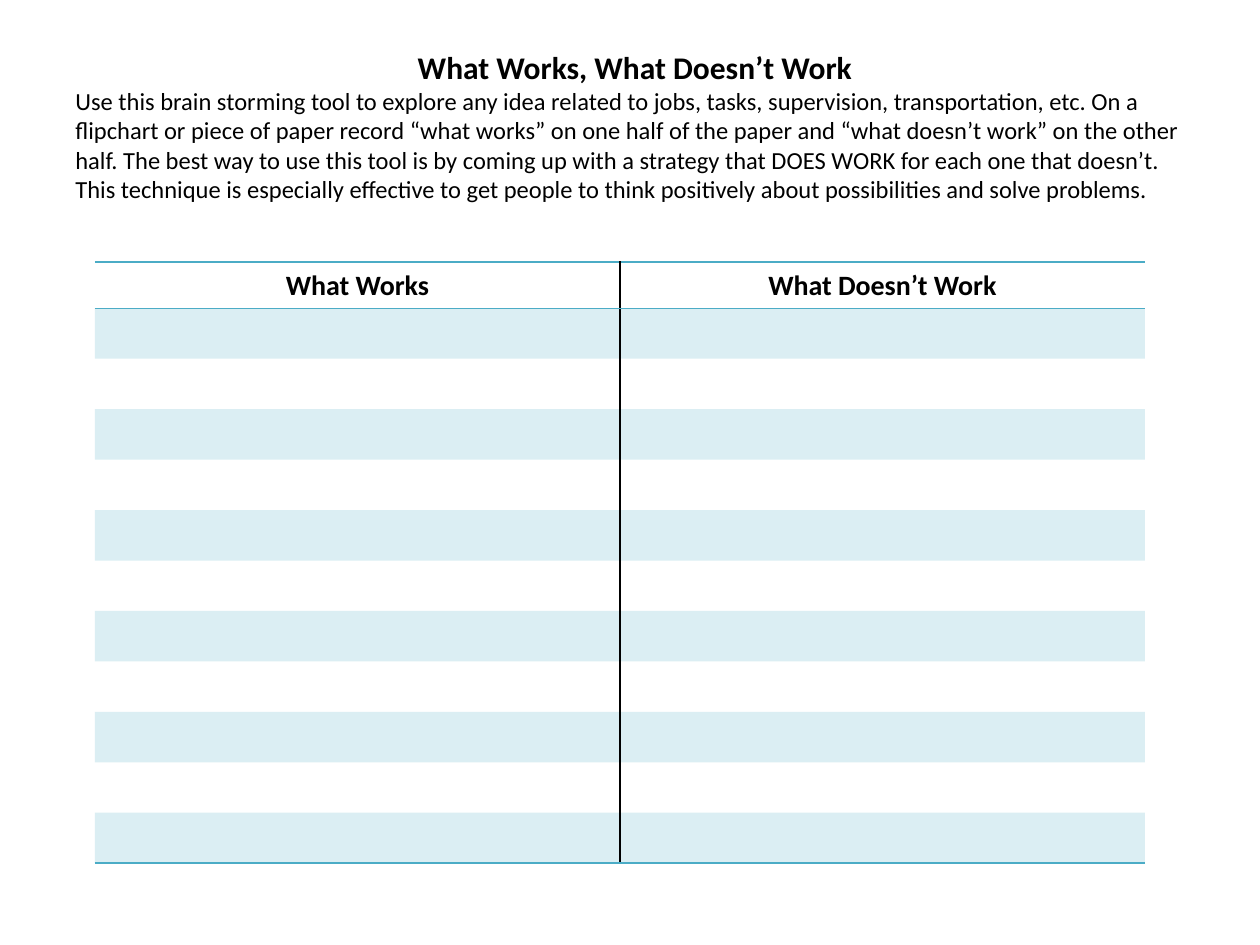
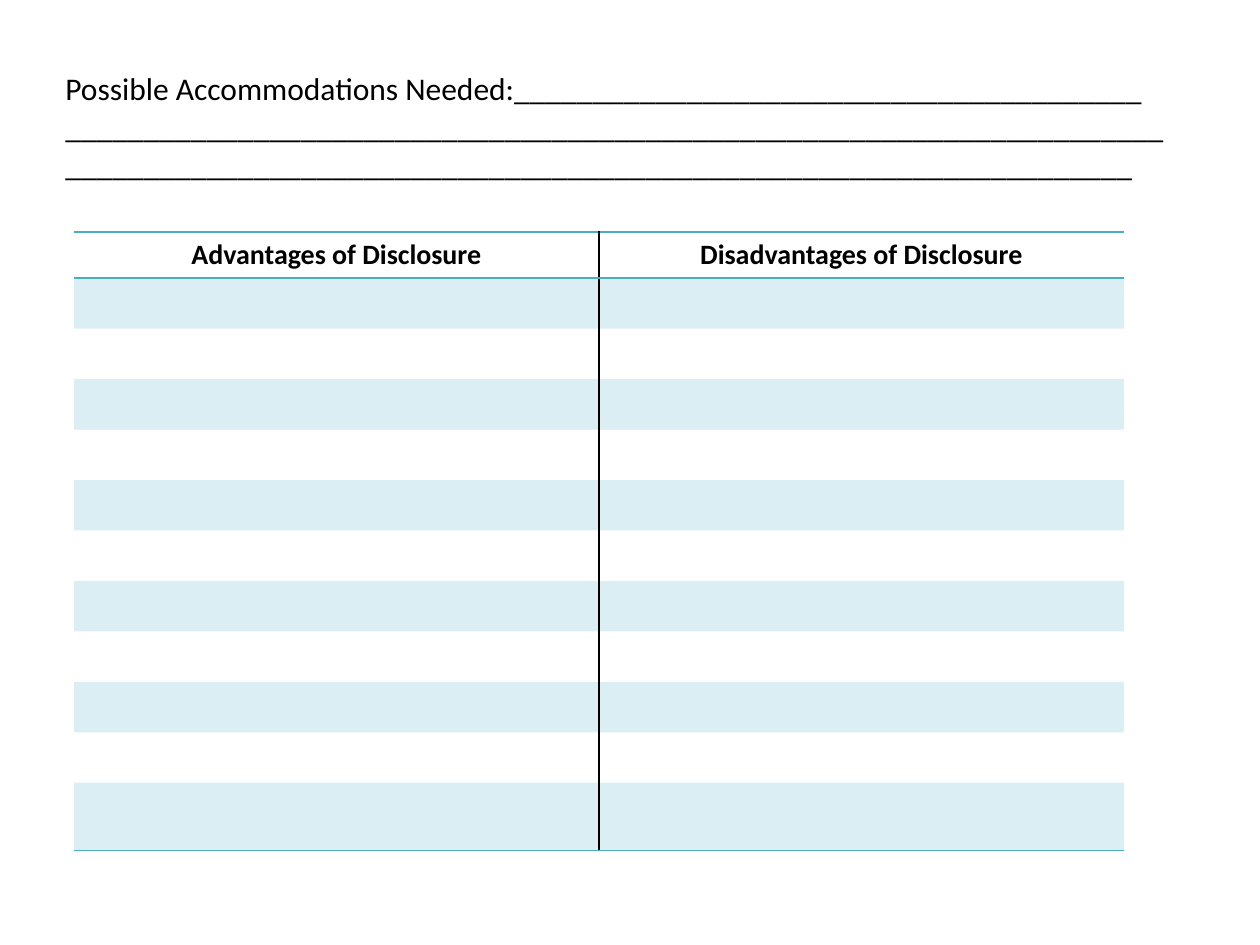
from lxml import etree
from pptx import Presentation
from pptx import util as u
from pptx.dml.color import RGBColor
from pptx.enum import text
from pptx.oxml import ns

PX = 914400 / 126
COLORS = {"ink": "000000", "accent": "4BACC6"}
FONT = "Calibri"
NO_STYLE = "{2D5ABB26-0587-4C30-8999-92F81FD0307C}"
BAND_ALPHA = 20000
HEADER_HEIGHT, ROW_HEIGHT, BODY_ROWS = 46, 50, 11

INTRO = (
    "Use this brain storming tool to explore any idea related to jobs, tasks, supervision, "
    "transportation, etc. On a flipchart or piece of paper record “what works” on one half of "
    "the paper and “what doesn’t work” on the other half. The best way to use this tool is by "
    "coming up with a strategy that DOES WORK for each one that doesn’t. This technique is "
    "especially effective to get people to think positively about possibilities and solve problems."
)
ANSWER_LINES = "Possible Accommodations Needed:" + "_" * 40 + " " + "_" * 138

TITLE = {"size": u.Pt(18), "bold": True}
BODY = {"size": u.Pt(14), "bold": False}
PROMPT = {"size": u.Pt(18), "bold": False}
HEADING = {"size": u.Pt(16), "bold": True}


def px(length):
    return u.Emu(round(length * PX))


def write(para, words, style, align=text.PP_ALIGN.LEFT):
    para.alignment = align
    span = para.add_run()
    span.text = words
    for name, value in {"name": FONT, **style}.items():
        setattr(span.font, name, value)
    span.font.color.rgb = RGBColor.from_string(COLORS["ink"])


def add_text(page, box, paragraphs):
    frame = page.shapes.add_textbox(*map(px, box)).text_frame
    frame.word_wrap = True
    frame.auto_size = text.MSO_AUTO_SIZE.SHAPE_TO_FIT_TEXT
    for index, content in enumerate(paragraphs):
        para = frame.add_paragraph() if index else frame.paragraphs[0]
        write(para, *content)


def add_border(cell, side, color):
    line = etree.SubElement(cell._tc.get_or_add_tcPr(), ns.qn(f"a:ln{side}"), w=str(u.Pt(1)))
    fill = etree.SubElement(line, ns.qn("a:solidFill"))
    etree.SubElement(fill, ns.qn("a:srgbClr"), val=COLORS[color])


def fill_band(cell):
    cell.fill.solid()
    cell.fill.fore_color.rgb = RGBColor.from_string(COLORS["accent"])
    color = cell._tc.tcPr.find(".//" + ns.qn("a:solidFill") + "/" + ns.qn("a:srgbClr"))
    # The cell fill follows the border lines
    color = cell._tc.tcPr.find(ns.qn("a:solidFill") + "/" + ns.qn("a:srgbClr"))
    etree.SubElement(color, ns.qn("a:alpha"), val=str(BAND_ALPHA))


def add_worksheet(page, box, headings, last_height=ROW_HEIGHT):
    """Two-column table with a heading row and banded blank rows."""
    left, top, width = box
    heights = [HEADER_HEIGHT] + [ROW_HEIGHT] * (BODY_ROWS - 1) + [last_height]
    frame = page.shapes.add_table(
        len(heights), len(headings), *map(px, (left, top, width, sum(heights))))
    table = frame.table
    table.first_row = table.horz_banding = False
    table._tbl.tblPr.find(ns.qn("a:tableStyleId")).text = NO_STYLE

    for column in table.columns:
        column.width = px(width / len(headings))
    for index, height in enumerate(heights):
        table.rows[index].height = px(height)
        for side, heading in enumerate(headings):
            cell = table.cell(index, side)
            # Centre divider, then the rules above and below
            add_border(cell, "L" if side else "R", "ink")
            if index == 0:
                add_border(cell, "T", "accent")
            if index in (0, BODY_ROWS):
                add_border(cell, "B", "accent")
            if index % 2:
                fill_band(cell)
            else:
                cell.fill.background()
            if index == 0:
                write(cell.text_frame.paragraphs[0], heading, HEADING, text.PP_ALIGN.CENTER)


def build_brainstorm(page):
    add_text(page, (63, 42, 1144, 170), [
        ("What Works, What Doesn’t Work", TITLE, text.PP_ALIGN.CENTER),
        (INTRO, BODY),
    ])
    add_worksheet(page, (95, 262, 1050), ("What Works", "What Doesn’t Work"))


def build_disclosure(page):
    add_worksheet(page, (74, 232, 1050),
                  ("Advantages of Disclosure", "Disadvantages of Disclosure"), last_height=68)
    add_text(page, (53, 63, 1124, 127), [(ANSWER_LINES, PROMPT)])


def main():
    deck = Presentation()
    deck.slide_width, deck.slide_height = px(1260), px(945)
    for build in (build_brainstorm, build_disclosure):
        build(deck.slides.add_slide(deck.slide_layouts[6]))
    deck.save("out.pptx")


if __name__ == "__main__":
    main()
